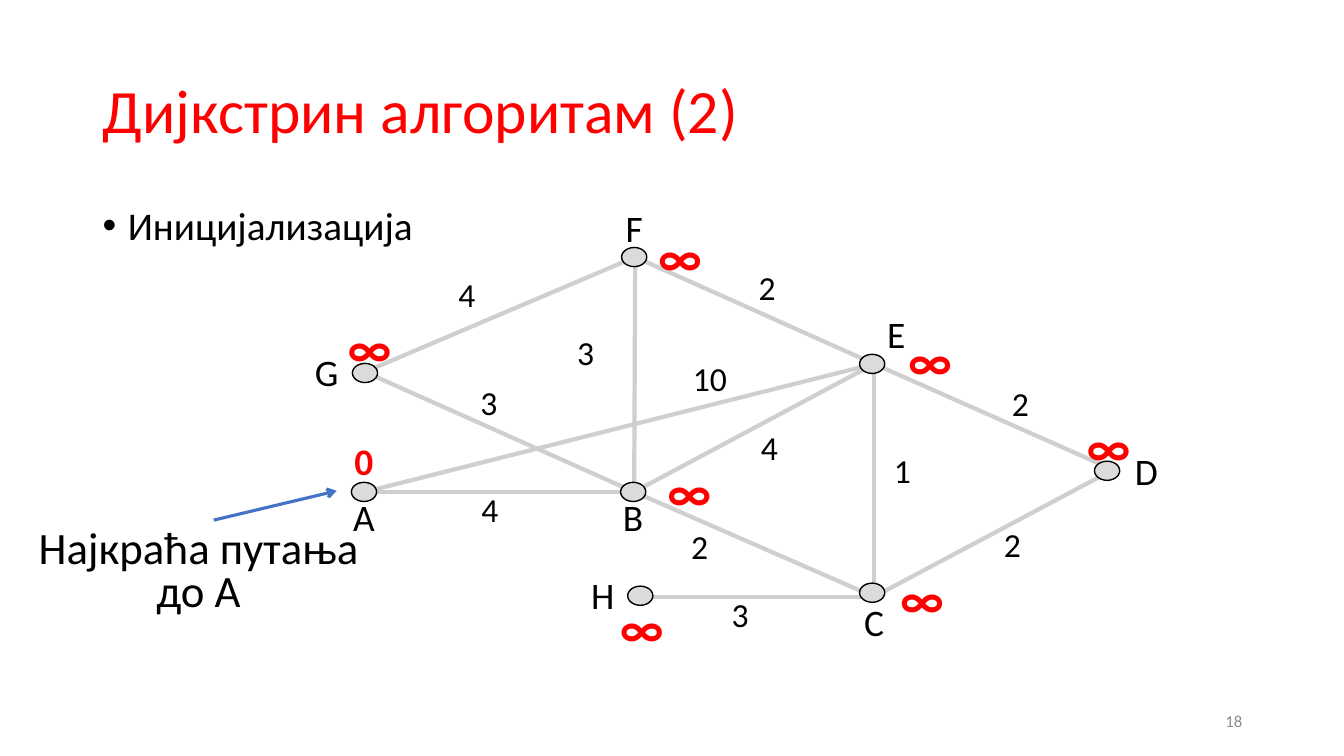
from dataclasses import dataclass
from typing import NamedTuple

from lxml.etree import SubElement
from pptx import Presentation
from pptx.dml.color import RGBColor
from pptx.enum.shapes import MSO_CONNECTOR, MSO_SHAPE
from pptx.enum.text import MSO_ANCHOR, PP_ALIGN
from pptx.oxml.ns import qn
from pptx.util import Inches, Pt


@dataclass(frozen=True)
class Theme:
    font: str = "Calibri"
    text: str = "000000"
    accent: str = "FF0000"
    edge: str = "D0CECE"
    dot: str = "DBDBDB"
    arrow: str = "4472C4"
    muted: str = "8C8C8C"
    title_size: float = 44
    callout_size: float = 32
    bullet_size: float = 28
    node_size: float = 26.7
    infinity_size: float = 37.3
    weight_size: float = 24
    number_size: float = 12


class Box(NamedTuple):
    left: float
    top: float
    width: float
    height: float

    def inches(self):
        return [Inches(length) for length in self]


class Node(NamedTuple):
    """Points are measured from the corner of the graph's box."""
    joint: tuple
    dot: tuple
    label: tuple
    distance: str
    distance_at: tuple


THEME = Theme()
DOT_WIDTH, DOT_HEIGHT = 0.25, 0.19

NODES = {
    "A": Node((0.62, 2.88), (0.61, 2.88), (0.61, 3.12), "0", (0.61, 2.57)),
    "B": Node((3.29, 2.88), (3.28, 2.88), (3.28, 3.12), "∞", (3.82, 2.87)),
    "C": Node((5.67, 3.92), (5.65, 3.88), (5.67, 4.17), "∞", (6.13, 3.93)),
    "D": Node((8.04, 2.66), (7.98, 2.67), (8.37, 2.67), "∞", (7.98, 2.42)),
    "E": Node((5.67, 1.61), (5.65, 1.61), (5.89, 1.31), "∞", (6.21, 1.57)),
    "F": Node((3.30, 0.55), (3.29, 0.55), (3.29, 0.26), "∞", (3.73, 0.54)),
    "G": Node((0.62, 1.69), (0.62, 1.70), (0.24, 1.69), "∞", (0.65, 1.44)),
    "H": Node((3.29, 3.92), (3.35, 3.91), (2.98, 3.90), "∞", (3.35, 4.22)),
}

# start, end, weight, centre of the weight
EDGES = [
    ("A", "B", 4, (1.86, 3.05)),
    ("B", "C", 2, (3.94, 3.42)),
    ("C", "E", 1, (5.95, 2.66)),
    ("B", "E", 4, (4.63, 2.44)),
    ("A", "E", 10, (4.04, 1.75)),
    ("B", "F", 3, (2.81, 1.49)),
    ("B", "G", 3, (1.85, 1.99)),
    ("G", "F", 4, (1.63, 0.92)),
    ("F", "E", 2, (4.61, 0.85)),
    ("E", "D", 2, (7.12, 2.00)),
    ("C", "D", 2, (7.04, 3.40)),
    ("C", "H", 3, (4.34, 4.09)),
]


def color(code):
    return RGBColor.from_string(code)


def write(frame, text, size, ink=THEME.text, bold=False,
          align=PP_ALIGN.LEFT, anchor=MSO_ANCHOR.TOP, wrap=True):
    """Fill a text frame with one formatted paragraph and return it."""
    frame.word_wrap = wrap
    frame.vertical_anchor = anchor
    frame.text = text
    paragraph = frame.paragraphs[0]
    paragraph.alignment = align
    paragraph.font.name = THEME.font
    paragraph.font.size = Pt(size)
    paragraph.font.bold = bold
    paragraph.font.color.rgb = color(ink)
    return paragraph


def add_text(slide, box, text, size, **style):
    textbox = slide.shapes.add_textbox(*box.inches())
    return write(textbox.text_frame, text, size, **style)


def add_label(slide, box, center, text, size, **style):
    """Centre a short unwrapped label on a point of the box."""
    width, height = 0.6, 0.7
    label_box = Box(box.left + center[0] - width / 2,
                    box.top + center[1] - height / 2, width, height)
    add_text(slide, label_box, text, size, align=PP_ALIGN.CENTER,
             anchor=MSO_ANCHOR.MIDDLE, wrap=False, **style)


def add_line(slide, box, start, end, ink, weight):
    ends = [Inches(origin + offset) for point in (start, end)
            for origin, offset in zip(box[:2], point)]
    line = slide.shapes.add_connector(MSO_CONNECTOR.STRAIGHT, *ends)
    line.line.color.rgb = color(ink)
    line.line.width = Pt(weight)
    SubElement(line._element.spPr, qn("a:effectLst"))
    return line


def add_title(slide, box, text):
    title = slide.shapes.title
    title.left, title.top, title.width, title.height = box.inches()
    write(title.text_frame, text, THEME.title_size, ink=THEME.accent,
          anchor=MSO_ANCHOR.MIDDLE).line_spacing = 0.9


def add_bullet(slide, box, text):
    paragraph = add_text(slide, box, text, THEME.bullet_size)
    paragraph.line_spacing = 0.9
    paragraph.space_before = Pt(10)
    properties = paragraph._p.get_or_add_pPr()
    properties.set("marL", str(Inches(0.25)))
    properties.set("indent", str(Inches(-0.25)))
    SubElement(properties, qn("a:buFont")).set("typeface", "Arial")
    SubElement(properties, qn("a:buChar")).set("char", "•")


def add_dot(slide, box, center):
    dot_box = Box(box.left + center[0] - DOT_WIDTH / 2,
                  box.top + center[1] - DOT_HEIGHT / 2, DOT_WIDTH, DOT_HEIGHT)
    dot = slide.shapes.add_shape(MSO_SHAPE.OVAL, *dot_box.inches())
    dot.shadow.inherit = False
    dot.fill.solid()
    dot.fill.fore_color.rgb = color(THEME.dot)
    dot.line.color.rgb = color(THEME.text)
    dot.line.width = Pt(1)


def add_graph(slide, box):
    for start, end, _, _ in EDGES:
        add_line(slide, box, NODES[start].joint, NODES[end].joint, THEME.edge, 3)
    for name, node in NODES.items():
        add_dot(slide, box, node.dot)
        add_label(slide, box, node.label, name, THEME.node_size)
    for _, _, weight, center in EDGES:
        add_label(slide, box, center, str(weight), THEME.weight_size)
    for node in NODES.values():
        size = THEME.infinity_size if node.distance == "∞" else THEME.node_size
        add_label(slide, box, node.distance_at, node.distance, size,
                  ink=THEME.accent, bold=True)


def add_callout(slide, box, text):
    """Place the remark and, above it, the arrow to the start node."""
    arrow = add_line(slide, box, (2.01, -0.05), (3.23, -0.34), THEME.arrow, 2.25)
    SubElement(arrow.line._get_or_add_ln(), qn("a:tailEnd")).set("type", "arrow")
    add_text(slide, box, text, THEME.callout_size,
             align=PP_ALIGN.CENTER).line_spacing = 0.8


def add_slide_number(slide, box, number):
    add_text(slide, box, str(number), THEME.number_size, ink=THEME.muted,
             align=PP_ALIGN.RIGHT, anchor=MSO_ANCHOR.MIDDLE)


def main():
    deck = Presentation()
    deck.slide_width, deck.slide_height = Inches(13.33), Inches(7.5)
    slide = deck.slides.add_slide(deck.slide_layouts.get_by_name("Title Only"))
    add_title(slide, Box(0.92, 0.4, 11.5, 1.45), "Дијкстрин алгоритам (2)")
    add_bullet(slide, Box(0.92, 2, 11.5, 4.76), "Иницијализација")
    add_graph(slide, Box(3, 2, 8.6, 4.6))
    add_callout(slide, Box(0.11, 5.21, 3.72, 0.96), "Најкраћа путања до A")
    add_slide_number(slide, Box(9.42, 6.95, 3, 0.4), 18)
    deck.save("out.pptx")


if __name__ == "__main__":
    main()
